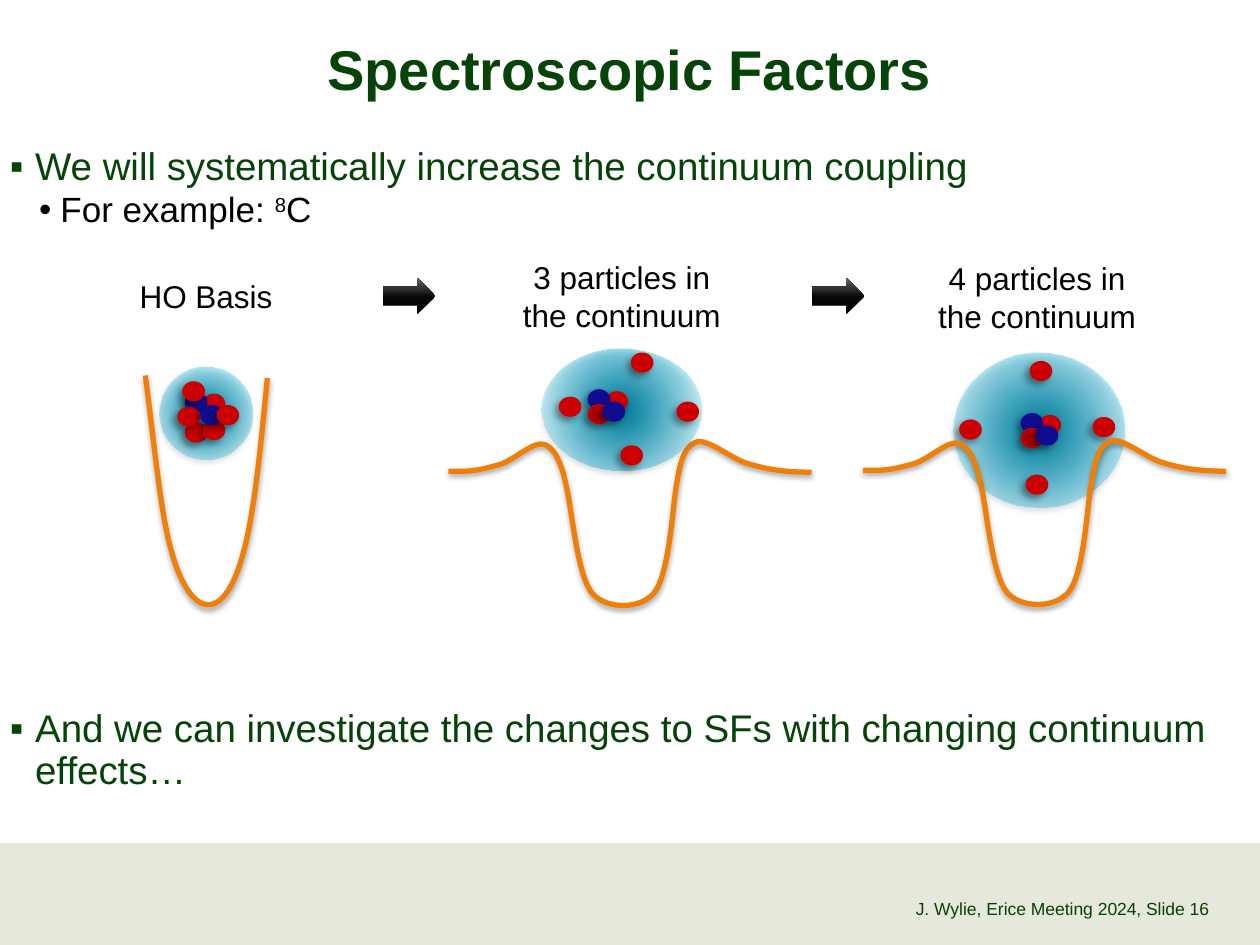
from lxml import etree
from pptx import Presentation
from pptx.dml.color import RGBColor
from pptx.enum.shapes import MSO_SHAPE
from pptx.enum.text import MSO_ANCHOR, PP_ALIGN
from pptx.oxml import parse_xml
from pptx.oxml.ns import nsdecls, qn
from pptx.util import Cm, Pt

GREEN = RGBColor(0x06, 0x43, 0x08)
BLACK = RGBColor(0, 0, 0)
BAND = RGBColor(0xE6, 0xE8, 0xDC)
ORANGE = RGBColor(0xF0, 0x7F, 0x09)
RED = RGBColor(0xCC, 0, 0)
DARK_RED = RGBColor(0xAB, 0, 0)
BLUE = RGBColor(0x0F, 0x0C, 0x8F)

RECT, OVAL, ARROW = MSO_SHAPE.RECTANGLE, MSO_SHAPE.OVAL, MSO_SHAPE.RIGHT_ARROW
LEFT, CENTER, RIGHT = PP_ALIGN.LEFT, PP_ALIGN.CENTER, PP_ALIGN.RIGHT
TOP, MIDDLE, BOTTOM = MSO_ANCHOR.TOP, MSO_ANCHOR.MIDDLE, MSO_ANCHOR.BOTTOM

SOFT = (35, 3.15, 1.8, 90)
DEEP = (40, 4, 3, 135)
RADIAL = ('<a:path path="circle"><a:fillToRect l="50000" t="50000" '
          'r="50000" b="50000"/></a:path>')
UPWARD = '<a:lin ang="16200000" scaled="0"/>'
CLOUD_STOPS = [(0, "007997", 100), (100, "00CCFF", 0)]
ARROW_STOPS = [(0, "000000", 100), (48, "080808", 100), (100, "666666", 100)]

HO_WELL = [(0, 2.49), (0.18, 3.84), (0.3, 5.21), (0.51, 5.97), (0.71, 6.73),
           (0.99, 7.09), (1.24, 7.11), (1.47, 7.14), (1.75, 6.88), (1.96, 6.12),
           (2.18, 5.36), (2.31, 4.11), (2.46, 2.54)]
BARRIER_WELL = [(0, 4.42), (0.53, 4.44), (0.71, 4.37), (1.02, 4.29), (1.35, 4.19),
                (1.73, 3.78), (1.96, 3.89), (2.18, 3.99), (2.31, 4.34), (2.41, 4.88),
                (2.51, 5.41), (2.62, 6.55), (2.9, 6.88), (3.18, 7.21), (3.86, 7.21),
                (4.14, 6.88), (4.42, 6.55), (4.5, 5.44), (4.57, 4.88), (4.65, 4.34),
                (4.72, 3.94), (4.98, 3.84), (5.21, 3.73), (5.72, 4.19), (6.05, 4.27),
                (6.38, 4.37), (6.71, 4.44), (7.32, 4.44)]


def core(x, y):
    """Return the four bound nucleons of a core at x, y."""
    return [(x + 0.36, y + 0.04, RED), (x, y, BLUE),
            (x, y + 0.3, DARK_RED), (x + 0.3, y + 0.25, BLUE)]


PANELS = [
    dict(box=(9.04, 5.08), well=BARRIER_WELL, cloud=(1.87, 1.95, 3.23, 2.46),
         well_on_top=False,
         nucleons=core(2.82, 2.78) + [(3.48, 3.91, RED), (2.24, 2.93, RED),
                                      (3.69, 2.04, RED), (4.61, 3.03, RED)]),
    dict(box=(17.4, 5.06), well=BARRIER_WELL, cloud=(1.82, 2.05, 3.45, 3.12),
         well_on_top=True,
         nucleons=core(3.19, 3.28) + [(3.29, 4.52, RED), (1.95, 3.41, RED),
                                      (3.37, 2.23, RED), (4.64, 3.36, RED)]),
    dict(box=(2.93, 5.08), well=HO_WELL, cloud=(0.28, 2.31, 1.88, 1.88),
         well_on_top=False,
         nucleons=[(0.81, 3.45, RED), (1.17, 2.87, RED), (1.17, 3.4, RED),
                   (0.81, 2.84, BLUE), (0.66, 3.13, RED), (1.12, 3.1, BLUE),
                   (1.45, 3.1, RED), (0.76, 2.62, RED)]),
]
LABELS = [("HO Basis", (2.54, 5.46, 3.23, 1.02)),
          ("3 particles in\vthe continuum", (10.26, 5.08, 4.55, 1.8)),
          ("4 particles in\vthe continuum", (18.63, 5.1, 4.55, 1.8))]


def add_shadow(sp, alpha, blur, dist, angle):
    """Give a shape an outer shadow."""
    sp.shadow.inherit = False
    effects = sp._element.spPr.find(qn("a:effectLst"))
    effects.append(parse_xml(
        f'<a:outerShdw {nsdecls("a")} blurRad="{Pt(blur)}" dist="{Pt(dist)}" '
        f'dir="{angle * 60000}" rotWithShape="0"><a:srgbClr val="000000">'
        f'<a:alpha val="{alpha * 1000}"/></a:srgbClr></a:outerShdw>'))


def fill_gradient(sp, stops, direction):
    """Fill a shape with gradient stops of position, colour and opacity."""
    sp.fill.gradient()
    spPr = sp._element.spPr
    gs = "".join(f'<a:gs pos="{pos * 1000}"><a:srgbClr val="{color}">'
                 f'<a:alpha val="{alpha * 1000}"/></a:srgbClr></a:gs>'
                 for pos, color, alpha in stops)
    spPr.replace(spPr.find(qn("a:gradFill")), parse_xml(
        f'<a:gradFill {nsdecls("a")} rotWithShape="1"><a:gsLst>{gs}</a:gsLst>'
        f'{direction}</a:gradFill>'))


def add_solid(shapes, kind, box, fill, line, shadow):
    """Add a solid outlined shape with a shadow."""
    sp = shapes.add_shape(kind, *map(Cm, box))
    sp.fill.solid()
    sp.fill.fore_color.rgb = fill
    sp.line.color.rgb = line
    sp.line.width = Pt(0.75)
    add_shadow(sp, *shadow)


def add_gradient(shapes, kind, box, stops, direction):
    """Add a shape with a gradient fill and no outline."""
    sp = shapes.add_shape(kind, *map(Cm, box))
    fill_gradient(sp, stops, direction)
    sp.line.fill.background()
    sp.shadow.inherit = False
    return sp


def style(p, size, color, bold=False):
    """Format every run of a paragraph."""
    for r in p.runs:
        for name, value in dict(name="Arial", size=Pt(size), bold=bold).items():
            setattr(r.font, name, value)
        r.font.color.rgb = color


def add_text(slide, box, text, size, color, align=LEFT, anchor=TOP,
             insets=(0, 0), spacing=None, wrap=True, bold=False):
    """Add a text box with one paragraph."""
    tf = slide.shapes.add_textbox(*map(Cm, box)).text_frame
    side, edge = map(Cm, insets)
    for name, value in dict(word_wrap=wrap, vertical_anchor=anchor,
                            margin_left=side, margin_right=side,
                            margin_top=edge, margin_bottom=edge).items():
        setattr(tf, name, value)
    p = tf.paragraphs[0]
    p.text, p.alignment, p.line_spacing = text, align, spacing
    style(p, size, color, bold)
    return tf


def add_bullet(p, char, margin, hang):
    """Give a paragraph a hanging bullet."""
    pPr = p._p.get_or_add_pPr()
    pPr.set("marL", str(Cm(margin)))
    pPr.set("indent", str(-Cm(hang)))
    etree.SubElement(pPr, qn("a:buFont")).set("typeface", "Arial")
    etree.SubElement(pPr, qn("a:buChar")).set("char", char)


def add_statement(slide, box, text):
    """Add a bulleted main statement."""
    tf = add_text(slide, box, text, 22, GREEN, spacing=0.9)
    add_bullet(tf.paragraphs[0], "▪", 0.51, 0.51)
    return tf


def add_intro(slide, box):
    """Add the opening statement with its example."""
    tf = add_statement(slide, box, "We will systematically increase the continuum coupling")
    p = tf.add_paragraph()
    p.level, p.line_spacing, p.space_before = 1, 0.9, Pt(2)
    add_bullet(p, "•", 1.02, 0.43)
    for text in ("For example: ", "8", "C"):
        p.add_run().text = text
    style(p, 20, BLACK)
    p.runs[1].font._element.set("baseline", "30000")


def add_well(shapes, left, top, nodes):
    """Draw the potential well as an open chain of cubic curves."""
    points = [(Cm(left + x), Cm(top + y)) for x, y in nodes]
    builder = shapes.build_freeform(*points[0])
    builder.add_line_segments(points[3::3], close=False)
    sp = builder.convert_to_shape()
    segments = list(sp._element.iter(qn("a:lnTo")))
    for i, segment in enumerate(segments):
        curve = etree.Element(qn("a:cubicBezTo"))
        for x, y in points[3 * i + 1:3 * i + 4]:
            pt = etree.SubElement(curve, qn("a:pt"))
            pt.set("x", str(x - sp.left))
            pt.set("y", str(y - sp.top))
        segment.getparent().replace(segment, curve)
    sp.fill.background()
    sp.line.color.rgb = ORANGE
    sp.line.width = Pt(3)
    add_shadow(sp, *SOFT)


def add_panel(slide, box, well, cloud, nucleons, well_on_top):
    """Add a nucleus in its potential well."""
    left, top = box
    shapes = slide.shapes.add_group_shape().shapes
    if not well_on_top:
        add_well(shapes, left, top, well)
    x, y, w, h = cloud
    add_shadow(add_gradient(shapes, OVAL, (left + x, top + y, w, h), CLOUD_STOPS, RADIAL), *SOFT)
    for x, y, color in nucleons:
        line = RED if color == DARK_RED else color
        add_solid(shapes, OVAL, (left + x, top + y, 0.43, 0.38), color, line, DEEP)
    if well_on_top:
        add_well(shapes, left, top, well)


def add_footer_text(slide, left, width, text, align):
    """Add one part of the footer line."""
    add_text(slide, (left, 17.64, width, 1.02), text, 10, GREEN, align, BOTTOM, (0, 0.13), 0.9)


def main():
    """Build the slide and save it."""
    prs = Presentation()
    prs.slide_width, prs.slide_height = Cm(25.4), Cm(19.05)
    slide = prs.slides.add_slide(prs.slide_layouts[6])
    add_solid(slide.shapes, RECT, (0, 17.01, 25.4, 2.04), BAND, BAND, SOFT)
    add_intro(slide, (0.2, 2.97, 24.97, 1.8))
    add_statement(slide, (0.2, 14.3, 24.97, 1.8),
                  "And we can investigate the changes to SFs with changing continuum effects…")
    add_text(slide, (0.21, 0.79, 24.97, 1.35), "Spectroscopic Factors", 32, GREEN,
             CENTER, MIDDLE, (0.15, 0.05), 0.88, bold=True)
    add_footer_text(slide, 22.91, 2.11, ", Slide 16", LEFT)
    for panel in PANELS:
        add_panel(slide, **panel)
    for text, box in LABELS:
        add_text(slide, box, text, 18, BLACK, CENTER, insets=(0.25, 0.13), wrap=False)
    for x in (7.72, 16.37):
        add_gradient(slide.shapes, ARROW, (x, 5.6, 1.06, 0.74), ARROW_STOPS, UPWARD)
    add_footer_text(slide, 11.13, 11.78, "J. Wylie, Erice Meeting 2024", RIGHT)
    prs.save("out.pptx")


if __name__ == "__main__":
    main()
